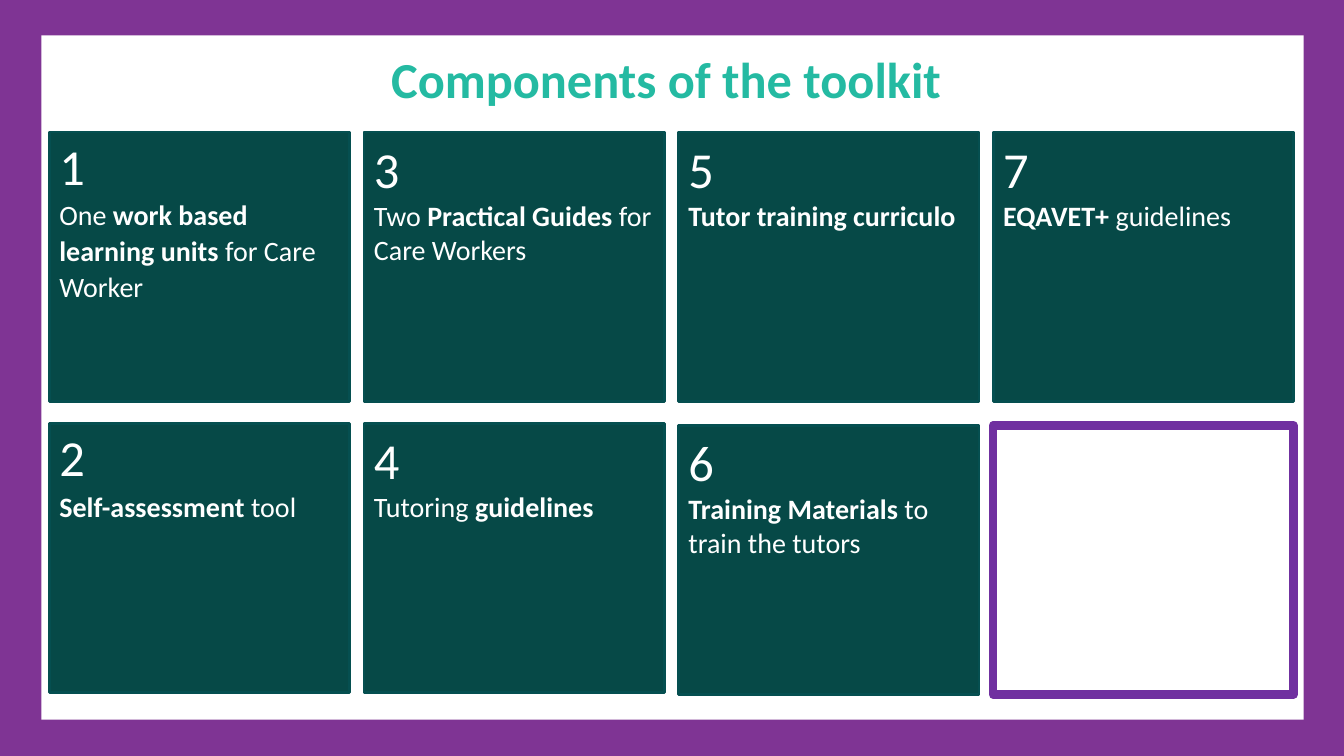
from dataclasses import dataclass

from pptx import Presentation
from pptx import util as u
from pptx.dml.color import RGBColor
from pptx.enum import shapes, text


@dataclass(frozen=True)
class Theme:
    font: str = "Calibri"
    purple: str = "7F3494"
    frame: str = "7030A0"
    teal: str = "24BAA2"
    card: str = "064947"
    card_line: str = "054F50"
    white: str = "FFFFFF"
    heading_size: int = 36
    body_size: int = 20


class Builder:
    """Holds the theme and the page being drawn."""

    def __init__(self, page, theme):
        self.page = page
        self.theme = theme

    def style(self, font, size, color, bold=None):
        font.name = self.theme.font
        font.size = u.Pt(size)
        font.color.rgb = RGBColor.from_string(color)
        font.bold = bold

    def rectangle(self, left, top, width, height, fill=None, line=None, weight=0):
        box = self.page.shapes.add_shape(
            shapes.MSO_SHAPE.RECTANGLE, u.Inches(left), u.Inches(top),
            u.Inches(width), u.Inches(height))
        box.shadow.inherit = False
        if fill:
            box.fill.solid()
            box.fill.fore_color.rgb = RGBColor.from_string(fill)
        else:
            box.fill.background()
        if line:
            box.line.color.rgb = RGBColor.from_string(line)
            box.line.width = u.Pt(weight)
        else:
            box.line.fill.background()
        return box

    def title(self, wording, left, top, width, height):
        box = self.page.shapes.add_textbox(
            u.Inches(left), u.Inches(top), u.Inches(width), u.Inches(height))
        box.text_frame.word_wrap = True
        para = box.text_frame.paragraphs[0]
        para.text = wording
        para.alignment = text.PP_ALIGN.CENTER
        self.style(para.font, self.theme.heading_size, self.theme.teal, True)

    def card(self, number, spans, left, top, width, height, inset, spacing):
        theme = self.theme
        box = self.rectangle(left, top, width, height, theme.card, theme.card_line, 2)
        frame = box.text_frame
        frame.word_wrap = True
        frame.vertical_anchor = text.MSO_ANCHOR.TOP
        frame.margin_top = u.Inches(inset)

        heading = frame.paragraphs[0]
        heading.text = str(number)
        heading.alignment = text.PP_ALIGN.LEFT
        self.style(heading.font, theme.heading_size, theme.white)

        body = frame.add_paragraph()
        body.alignment = text.PP_ALIGN.LEFT
        body.line_spacing = spacing
        self.style(body.font, theme.body_size, theme.white)
        for wording, bold in spans:
            span = body.add_run()
            span.text = wording
            span.font.bold = bold


# Card wording in number order: (text, bold) spans
CARDS = [
    [("One ", False), ("work based learning units ", True), ("for Care Worker", False)],
    [("Self-assessment ", True), ("tool", False)],
    [("Two ", False), ("Practical Guides ", True), ("for Care Workers", False)],
    [("Tutoring ", False), ("guidelines", True)],
    [("Tutor training curriculo", True)],
    [("Training Materials ", True), ("to train the tutors", False)],
    [("EQAVET+ ", True), ("guidelines", False)],
]
CARD_WIDTH, CARD_HEIGHT = 2.98, 2.67
GRID_LEFT, COLUMN_STEP = 0.49, 3.12


def card_place(index):
    """Cards run down each column; the right half of row two sits a touch lower."""
    column, row = divmod(index, 2)
    lower_top = 4.2 if column < 2 else 4.22
    return (GRID_LEFT + column * COLUMN_STEP, lower_top if row else 1.31,
            CARD_WIDTH, CARD_HEIGHT)


def main():
    deck = Presentation()
    deck.slide_width, deck.slide_height = u.Inches(13.33), u.Inches(7.5)
    theme = Theme()
    builder = Builder(deck.slides.add_slide(deck.slide_layouts[6]), theme)

    # Purple border around a white panel
    builder.rectangle(0, 0, 13.33, 7.5, theme.purple)
    builder.rectangle(0.41, 0.35, 12.52, 6.79, theme.white)

    # Title
    builder.title("Components of the toolkit ", 0.87, 0.43, 11.59, 0.88)

    # Numbered cards; the first column has looser lines
    for index, spans in enumerate(CARDS):
        inset, spacing = (0.03, 1.07) if index < 2 else (0.06, 1.0)
        builder.card(index + 1, spans, *card_place(index), inset, spacing)

    # Empty frame in the last cell
    builder.rectangle(*card_place(len(CARDS)), line=theme.frame, weight=6)

    deck.save("out.pptx")


if __name__ == "__main__":
    main()
